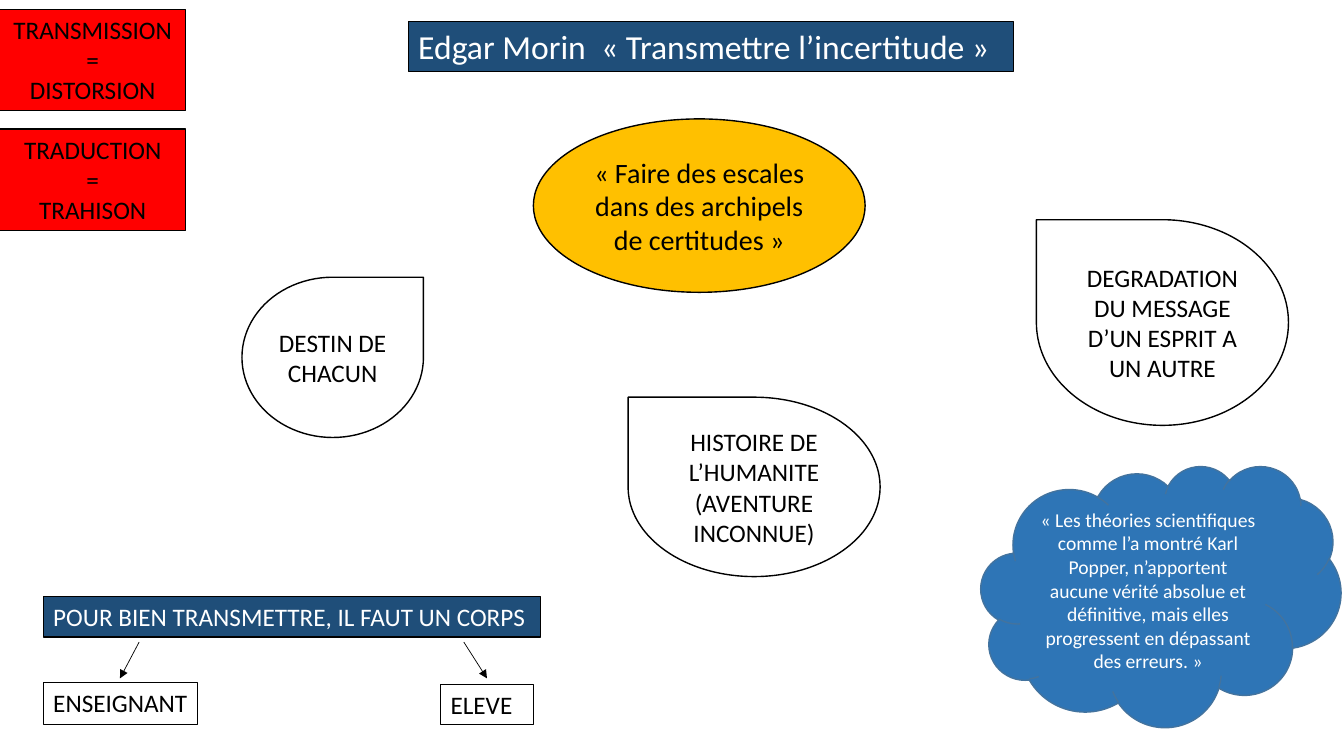
from lxml.etree import SubElement
from pptx import Presentation
from pptx.dml.color import RGBColor
from pptx.enum.shapes import MSO_CONNECTOR, MSO_SHAPE
from pptx.enum.text import MSO_ANCHOR, MSO_AUTO_SIZE, PP_ALIGN
from pptx.oxml.ns import qn
from pptx.util import Inches, Pt

BLACK, WHITE, RED, NAVY, GOLD = "000000", "FFFFFF", "FF0000", "1F4E79", "FFC000"
BLUE, BLUE_EDGE = "2E75B6", "43739E"


def color(value):
    return RGBColor.from_string(value)


class SlideBuilder:
    font_name = "Calibri"
    label_frame = {"word_wrap": True, "vertical_anchor": MSO_ANCHOR.TOP,
                   "auto_size": MSO_AUTO_SIZE.SHAPE_TO_FIT_TEXT}
    bubble_frame = {"word_wrap": True, "vertical_anchor": MSO_ANCHOR.MIDDLE}

    def __init__(self, presentation):
        self.slide = presentation.slides.add_slide(presentation.slide_layouts[6])

    def apply(self, target, values):
        for name, value in values.items():
            setattr(target, name, value)

    def outline(self, item, line_color, width):
        item.line.color.rgb = color(line_color)
        item.line.width = Pt(width)

    def fill_text(self, shape, lines, frame_format, size, text_color, alignment):
        frame = shape.text_frame
        self.apply(frame, frame_format)
        frame.text = "\n".join(lines)
        for paragraph in frame.paragraphs:
            paragraph.alignment = alignment
            for run in paragraph.runs:
                self.apply(run.font, {"name": self.font_name, "size": Pt(size)})
                run.font.color.rgb = color(text_color)

    def add_shape(self, kind, box, fill, line_color, width):
        shape = self.slide.shapes.add_shape(kind, *map(Inches, box))
        shape.shadow.inherit = False
        if fill:
            shape.fill.solid()
            shape.fill.fore_color.rgb = color(fill)
        else:
            shape.fill.background()
        self.outline(shape, line_color, width)
        return shape

    def label(self, box, lines, fill, text_color=BLACK, size=18, alignment=PP_ALIGN.LEFT):
        shape = self.add_shape(MSO_SHAPE.RECTANGLE, box, fill, BLACK, 0.75)
        self.fill_text(shape, lines, self.label_frame, size, text_color, alignment)

    def bubble(self, kind, box, lines, fill=WHITE, text_color=BLACK, size=18,
               line_color=BLACK, flipped=False):
        shape = self.add_shape(kind, box, fill, line_color, 1)
        if flipped:
            shape._element.spPr.find(qn("a:xfrm")).set("flipH", "1")
        self.fill_text(shape, lines, self.bubble_frame, size, text_color, PP_ALIGN.CENTER)

    def arrow(self, start, end):
        connector = self.slide.shapes.add_connector(
            MSO_CONNECTOR.STRAIGHT, *map(Inches, start + end))
        self.outline(connector, BLACK, 0.5)
        properties = connector._element.spPr
        SubElement(properties.find(qn("a:ln")), qn("a:tailEnd"), type="triangle")
        SubElement(properties, qn("a:effectLst"))


def main():
    presentation = Presentation()
    presentation.slide_width = Inches(13.33)
    presentation.slide_height = Inches(7.5)
    builder = SlideBuilder(presentation)

    builder.label((4.05, 0.21, 6, 0.5), ["Edgar Morin  « Transmettre l’incertitude »"],
                  NAVY, WHITE, 24)
    builder.bubble(MSO_SHAPE.OVAL, (5.29, 1.18, 3.29, 1.72),
                   ["« Faire des escales dans des archipels de certitudes »"], GOLD, size=20)

    for top, first, last in ((1.28, "TRADUCTION", "TRAHISON"),
                             (0.09, "TRANSMISSION", "DISTORSION")):
        builder.label((0, top, 1.84, 1.01), [first, " = ", last], RED,
                      alignment=PP_ALIGN.CENTER)

    for box, lines, flipped in (
        ((2.4, 2.75, 1.8, 1.59), ["DESTIN DE CHACUN"], False),
        ((6.23, 3.94, 2.5, 1.78), ["HISTOIRE DE L’HUMANITE", "(AVENTURE INCONNUE)"], True),
        ((10.28, 2.18, 2.5, 2.04), ["DEGRADATION DU MESSAGE D’UN ESPRIT A UN AUTRE"], True),
    ):
        builder.bubble(MSO_SHAPE.TEAR, box, lines, flipped=flipped)

    builder.label((0.43, 5.92, 4.93, 0.4), ["POUR BIEN TRANSMETTRE, IL FAUT UN CORPS"],
                  NAVY, WHITE)
    builder.label((0.43, 6.77, 1.53, 0.42), ["ENSEIGNANT"], WHITE)
    builder.label((4.37, 6.79, 0.92, 0.4), ["ELEVE"], None)
    for start_x, end_x in ((1.38, 1.19), (4.6, 4.83)):
        builder.arrow((start_x, 6.37), (end_x, 6.73))

    builder.bubble(MSO_SHAPE.CLOUD, (9.73, 4.62, 3.57, 2.59),
                   ["« Les théories scientifiques comme l’a montré Karl Popper, "
                    "n’apportent aucune vérité absolue et définitive, mais elles "
                    "progressent en dépassant des erreurs. »"],
                   BLUE, WHITE, 14, BLUE_EDGE)

    presentation.save("out.pptx")


if __name__ == "__main__":
    main()
